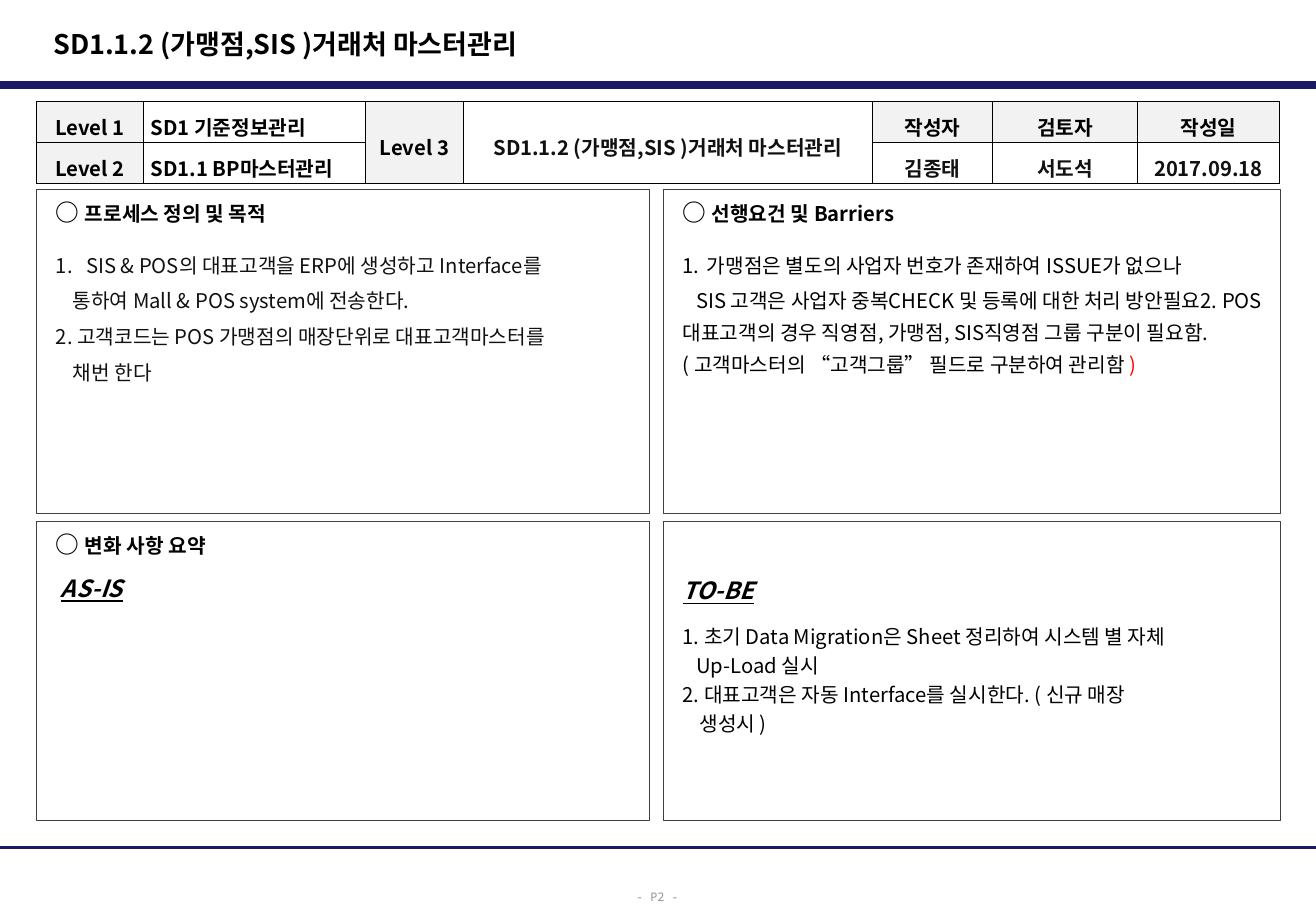
from lxml.etree import SubElement
from pptx import Presentation
from pptx.dml.color import RGBColor
from pptx.enum.shapes import MSO_CONNECTOR, MSO_SHAPE
from pptx.enum.text import MSO_ANCHOR, PP_ALIGN
from pptx.oxml.ns import qn
from pptx.util import Pt

COLORS = {"navy": "191966", "border": "404040", "black": "000000", "text": "111111",
          "gray": "969696", "label": "F2F2F2", "red": "FF0000"}
FONT = "Noto Sans CJK KR"
PAGE_WIDTH, PAGE_HEIGHT = 779.76, 540
TITLE = "SD1.1.2 (가맹점,SIS )거래처 마스터관리"


class ProcessSlide:
    """Holds the style and the current slide, with a method per element."""

    def __init__(self, presentation):
        self.slide = presentation.slides.add_slide(presentation.slide_layouts[6])

    def color(self, name):
        return RGBColor.from_string(COLORS[name])

    def run(self, paragraph, text, size=12, color="black", bold=False, accent=False, font=FONT):
        run = paragraph.add_run()
        run.text = text
        run.font.size = Pt(size)
        run.font.bold = bold
        run.font.italic = run.font.underline = accent
        run.font.color.rgb = self.color(color)
        run.font.name = font
        SubElement(run.font._element, qn("a:ea"), typeface=font)

    def paragraph(self, frame, runs, first=False, before=0, line=18, left=0, indent=0,
                  numbered=False, align=PP_ALIGN.LEFT):
        paragraph = frame.paragraphs[0] if first else frame.add_paragraph()
        paragraph.alignment = align
        paragraph.line_spacing = Pt(line)
        paragraph.space_before = Pt(before)
        properties = paragraph._p.get_or_add_pPr()
        properties.set("marL", str(Pt(left)))
        properties.set("indent", str(Pt(indent)))
        if numbered:
            SubElement(properties, qn("a:buAutoNum"), type="arabicPeriod")
        for text, style in runs:
            self.run(paragraph, text, **style)

    def rule(self, y, weight):
        line = self.slide.shapes.add_connector(
            MSO_CONNECTOR.STRAIGHT, Pt(0), Pt(y), Pt(PAGE_WIDTH), Pt(y))
        line.line.color.rgb = self.color("navy")
        line.line.width = Pt(weight)
        SubElement(line._element.spPr, qn("a:effectLst"))

    def text(self, left, top, width, height, text, line, align=PP_ALIGN.LEFT, **style):
        shape = self.slide.shapes.add_textbox(Pt(left), Pt(top), Pt(width), Pt(height))
        frame = shape.text_frame
        frame.word_wrap = True
        frame.vertical_anchor = MSO_ANCHOR.MIDDLE
        self.paragraph(frame, [(text, style)], first=True, line=line, align=align)

    def panel(self, left, top, width, height, paragraphs, inset=3.6):
        shape = self.slide.shapes.add_shape(
            MSO_SHAPE.RECTANGLE, Pt(left), Pt(top), Pt(width), Pt(height))
        shape.shadow.inherit = False
        shape.fill.background()
        shape.line.color.rgb = self.color("border")
        shape.line.width = Pt(0.5)
        frame = shape.text_frame
        frame.word_wrap = True
        frame.vertical_anchor = MSO_ANCHOR.TOP
        frame.margin_left, frame.margin_right = Pt(11.5), Pt(7.2)
        frame.margin_top, frame.margin_bottom = Pt(inset), Pt(3.6)
        for index, (runs, layout) in enumerate(paragraphs):
            self.paragraph(frame, runs, first=index == 0, **layout)

    def cell(self, cell, content):
        properties = cell._tc.get_or_add_tcPr()
        for side in ("a:lnL", "a:lnR", "a:lnT", "a:lnB"):
            line = SubElement(properties, qn(side), w=str(Pt(0.5)))
            fill = SubElement(line, qn("a:solidFill"))
            SubElement(fill, qn("a:srgbClr"), val=COLORS["black"])
        cell.fill.background()
        if content is None:
            return
        text, color, shaded, align = content
        if shaded:
            cell.fill.solid()
            cell.fill.fore_color.rgb = self.color("label")
        cell.vertical_anchor = MSO_ANCHOR.MIDDLE
        cell.margin_left = cell.margin_right = Pt(4.3)
        cell.margin_top, cell.margin_bottom = Pt(4.6), Pt(0.7)
        self.paragraph(cell.text_frame, [(text, {"bold": True, "color": color})],
                       first=True, line=18.7, align=align)

    def table(self, left, top, widths, row_height, rows, merged_columns):
        table = self.slide.shapes.add_table(
            len(rows), len(widths), Pt(left), Pt(top),
            Pt(sum(widths)), Pt(row_height * len(rows))).table
        table.first_row = table.horz_banding = False
        for column, width in zip(table.columns, widths):
            column.width = Pt(width)
        for row in table.rows:
            row.height = Pt(row_height)
        for column in merged_columns:
            table.cell(0, column).merge(table.cell(len(rows) - 1, column))
        for row_index, row in enumerate(rows):
            for column_index, content in enumerate(row):
                self.cell(table.cell(row_index, column_index), content)


def heading(text):
    return [("○ ", {"size": 14, "bold": True}), (text, {"bold": True})], {}


def state(text, **layout):
    return [(text, {"size": 14, "bold": True, "accent": True})], layout


def body(text, color="text", before=2.5, line=18.7, **layout):
    return [(text, {"color": color})], {"before": before, "line": line, **layout}


def label(text):
    return text, "black", True, PP_ALIGN.CENTER


def value(text, color="text", align=PP_ALIGN.CENTER):
    return text, color, False, align


def main():
    presentation = Presentation()
    presentation.slide_width, presentation.slide_height = Pt(PAGE_WIDTH), Pt(PAGE_HEIGHT)
    page = ProcessSlide(presentation)
    page.rule(50.4, 4.5)
    page.rule(502.5, 1.5)
    page.text(360, 522, 59, 18, "- P2 -", 10, PP_ALIGN.CENTER,
              size=7, color="gray", font="Noto Sans Mono")
    page.text(24.5, 11.5, 512, 27.4, TITLE, 21, size=16, bold=True)

    left, right, upper, lower = 21.6, 393, 112.3, 309.2
    left_width, right_width, upper_height, lower_height = 363, 365.8, 192.2, 177
    page.panel(left, upper, left_width, upper_height, [
        heading("프로세스 정의 및 목적"),
        body("SIS & POS의 대표고객을 ERP에 생성하고 Interface를",
             before=11.8, left=18, indent=-18, numbered=True),
        body("통하여 Mall & POS system에 전송한다.", left=10),
        body("2. 고객코드는 POS 가맹점의 매장단위로 대표고객마스터를"),
        body("채번 한다", left=10)])
    barriers, layout = body(
        "SIS 고객은 사업자 중복CHECK 및 등록에 대한 처리 방안필요2. POS 대표고객의 경우 "
        "직영점, 가맹점, SIS직영점 그룹 구분이 필요함. ( 고객마스터의 “고객그룹” 필드로 "
        "구분하여 관리함 ", color="black", indent=8)
    page.panel(right, upper, right_width, upper_height, [
        heading("선행요건 및 Barriers"),
        body("가맹점은 별도의 사업자 번호가 존재하여 ISSUE가 없으나", color="black",
             before=11.8, left=14.4, indent=-14.4, numbered=True),
        (barriers + [(")", {"color": "red"})], layout)])
    page.panel(left, lower, left_width, lower_height, [
        heading("변화 사항 요약"), state("AS-IS", before=8.2, left=3)])
    plan = {"color": "black", "line": 17.2}
    page.panel(right, lower, right_width, lower_height, [
        state("TO-BE"),
        body("1. 초기 Data Migration은 Sheet 정리하여 시스템 별 자체", **{**plan, "before": 9}),
        body("Up-Load 실시", **{**plan, "before": 0}, left=8),
        body("2. 대표고객은 자동 Interface를 실시한다. ( 신규 매장", **{**plan, "before": 0}),
        body("생성시 )", **{**plan, "before": 0}, left=10)], inset=31)

    page.table(left, 60.1, [63.4, 131.8, 57.6, 242.6, 71.3, 85.7, 84.2], 24.3, [
        [label("Level 1"), value("SD1 기준정보관리", "black", PP_ALIGN.LEFT),
         label("Level 3"), value(TITLE), label("작성자"), label("검토자"), label("작성일")],
        [label("Level 2"), value("SD1.1 BP마스터관리", "black", PP_ALIGN.LEFT),
         None, None, value("김종태"), value("서도석"), value("2017.09.18")],
    ], merged_columns=(2, 3))
    presentation.save("out.pptx")


if __name__ == "__main__":
    main()
